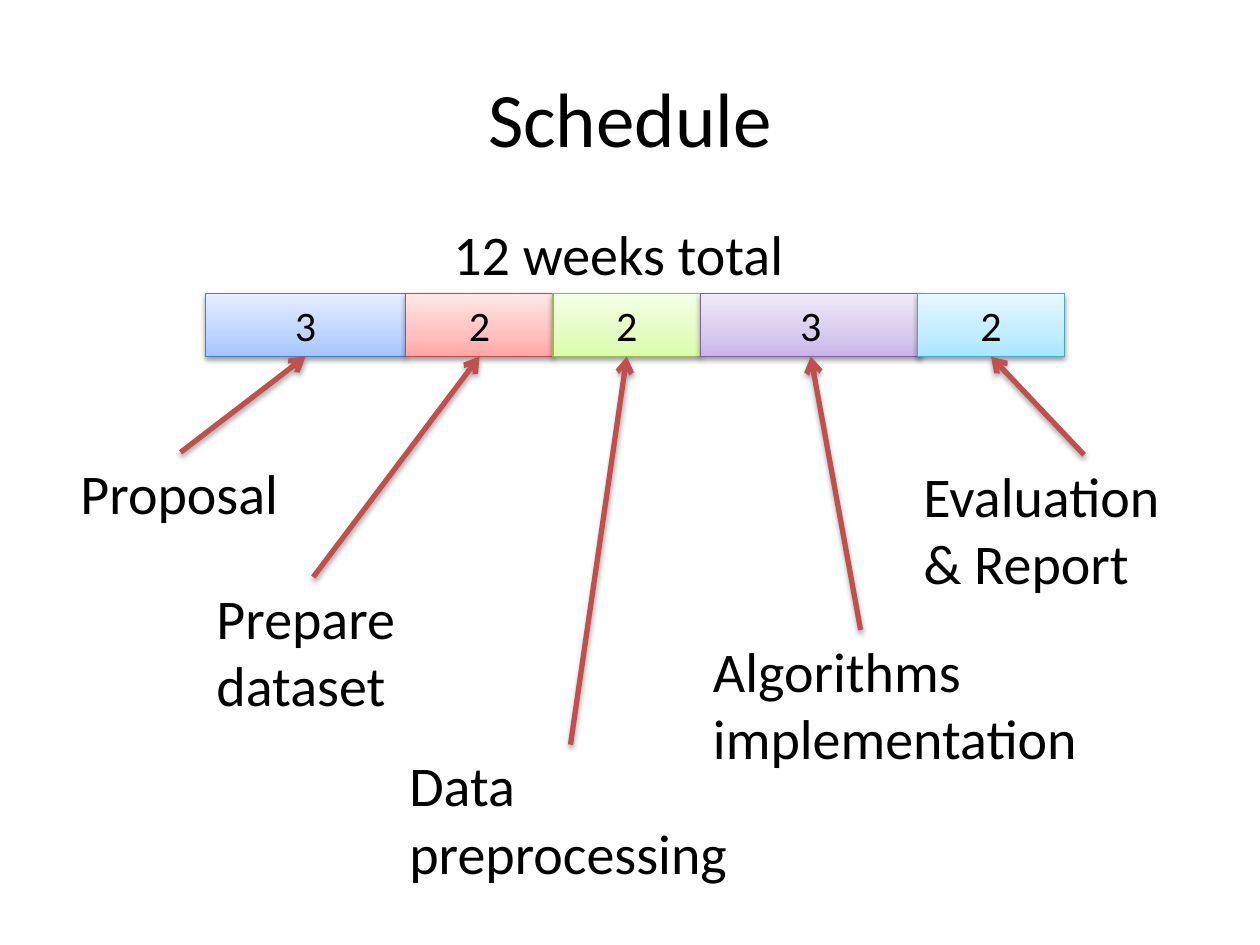
"""Build a schedule slide with a twelve-week bar and labelled stages."""
from dataclasses import dataclass

from lxml.etree import SubElement
from pptx import Presentation
from pptx.dml.color import RGBColor
from pptx.enum.shapes import MSO_CONNECTOR, MSO_SHAPE
from pptx.enum.text import MSO_ANCHOR, MSO_AUTO_SIZE, PP_ALIGN
from pptx.oxml.ns import qn
from pptx.shapes.base import BaseShape
from pptx.shapes.shapetree import SlideShapes
from pptx.text.text import _Paragraph as Para
from pptx.util import Pt

FONT = "Calibri"
BLACK = RGBColor(0x00, 0x00, 0x00)
RED = RGBColor(0xC0, 0x50, 0x4D)
BLUES = (RGBColor(0xA4, 0xC4, 0xFF), RGBColor(0xBF, 0xD4, 0xFF), RGBColor(0xE6, 0xEE, 0xFF))
PINKS = (RGBColor(0xFF, 0xA6, 0xA5), RGBColor(0xFF, 0xC0, 0xBF), RGBColor(0xFF, 0xE7, 0xE7))
GREENS = (RGBColor(0xDA, 0xFD, 0xA7), RGBColor(0xE4, 0xFC, 0xC2), RGBColor(0xF5, 0xFF, 0xE7))
MAUVES = (RGBColor(0xC9, 0xB5, 0xE8), RGBColor(0xD8, 0xCB, 0xEE), RGBColor(0xF0, 0xEA, 0xF9))
AQUAS = (RGBColor(0xA7, 0xE6, 0xFF), RGBColor(0xC1, 0xED, 0xFF), RGBColor(0xE7, 0xF8, 0xFF))
BLUE_EDGE = RGBColor(0x4B, 0x7E, 0xBC)
PINK_EDGE = RGBColor(0xBF, 0x4C, 0x48)
GREEN_EDGE = RGBColor(0x98, 0xB9, 0x55)
MAUVE_EDGE = RGBColor(0x7D, 0x60, 0xA0)
AQUA_EDGE = RGBColor(0x46, 0xAA, 0xC5)
STOPS = (0, 35, 100)
BAR_TOP, BAR_HIGH = 167.76, 36


@dataclass(frozen=True)
class Label:
    text: str
    left: float
    top: float
    width: float
    height: float = 84.96
    wrap: bool = False


@dataclass(frozen=True)
class Stage:
    weeks: int
    left: float
    width: float
    tints: tuple[RGBColor, ...]
    edge: RGBColor
    label: Label
    tail: float


STAGES = (
    Stage(3, 117.36, 114.48, BLUES, BLUE_EDGE,
          Label("Proposal", 38.88, 258.48, 128.88, 46.08), 103.2),
    Stage(2, 231.84, 84.24, PINKS, PINK_EDGE,
          Label("Prepare\ndataset", 116.64, 329.76, 124.56), 179),
    Stage(2, 316.08, 84.24, GREENS, GREEN_EDGE,
          Label("Data\npreprocessing", 226.8, 425.52, 198), 326),
    Stage(3, 400.32, 126, MAUVES, MAUVE_EDGE,
          Label("Algorithms implementation", 400.32, 360, 262.8, wrap=True), 491.8),
    Stage(2, 524.16, 84.24, AQUAS, AQUA_EDGE,
          Label("Evaluation\n& Report", 520.56, 259.92, 198, wrap=True), 619.5),
)
TOTAL = Label("12 weeks total", 252, 121.68, 205.2, 46.08)


def style(para: Para, size: float) -> None:
    para.font.name = FONT
    para.font.size = Pt(size)
    para.font.color.rgb = BLACK


def add_shade(shape: BaseShape, drop: float, alpha: int) -> None:
    effects = SubElement(shape.element.spPr, qn("a:effectLst"))
    shade = SubElement(effects, qn("a:outerShdw"), blurRad=str(Pt(3.15)),
                       dist=str(Pt(drop)), dir="5400000", rotWithShape="0")
    tint = SubElement(shade, qn("a:srgbClr"), val=str(BLACK))
    SubElement(tint, qn("a:alpha"), val=str(alpha * 1000))


def add_bar(shapes: SlideShapes, stage: Stage) -> None:
    bar = shapes.add_shape(MSO_SHAPE.RECTANGLE, Pt(stage.left), Pt(BAR_TOP),
                           Pt(stage.width), Pt(BAR_HIGH))
    bar.fill.gradient()
    bar.fill.gradient_angle = 90
    stops = bar.element.spPr.find(qn("a:gradFill")).find(qn("a:gsLst"))
    for old in list(stops):
        stops.remove(old)
    for place, tint in zip(STOPS, stage.tints):
        stop = SubElement(stops, qn("a:gs"), pos=str(place * 1000))
        SubElement(stop, qn("a:srgbClr"), val=str(tint))
    bar.line.color.rgb = stage.edge
    bar.line.width = Pt(0.75)
    add_shade(bar, 1.6, 38)
    frame = bar.text_frame
    frame.text = str(stage.weeks)
    frame.vertical_anchor = MSO_ANCHOR.MIDDLE
    para = frame.paragraphs[0]
    para.alignment = PP_ALIGN.CENTER
    style(para, 24)


def add_label(shapes: SlideShapes, label: Label) -> None:
    box = shapes.add_textbox(Pt(label.left), Pt(label.top),
                             Pt(label.width), Pt(label.height))
    frame = box.text_frame
    frame.word_wrap = label.wrap
    frame.auto_size = MSO_AUTO_SIZE.SHAPE_TO_FIT_TEXT
    frame.text = label.text
    for para in frame.paragraphs:
        style(para, 32)


def add_arrow(shapes: SlideShapes, stage: Stage) -> None:
    arrow = shapes.add_connector(
        MSO_CONNECTOR.STRAIGHT, Pt(stage.tail), Pt(stage.label.top),
        Pt(stage.left + stage.width / 2), Pt(BAR_TOP + BAR_HIGH))
    arrow.line.color.rgb = RED
    arrow.line.width = Pt(3)
    SubElement(arrow.element.spPr.find(qn("a:ln")), qn("a:tailEnd"), type="arrow")
    add_shade(arrow, 1.8, 35)


def main() -> None:
    deck = Presentation()
    deck.slide_width, deck.slide_height = Pt(720), Pt(540)
    slide = deck.slides.add_slide(deck.slide_layouts[5])
    shapes = slide.shapes
    title = shapes.title
    title.left, title.top, title.width, title.height = Pt(36), Pt(21.6), Pt(648), Pt(90)
    title.text_frame.text = "Schedule"
    title.text_frame.vertical_anchor = MSO_ANCHOR.MIDDLE
    head = title.text_frame.paragraphs[0]
    head.alignment = PP_ALIGN.CENTER
    style(head, 44)
    for stage in STAGES:
        add_bar(shapes, stage)
    for stage in STAGES:
        add_label(shapes, stage.label)
        add_arrow(shapes, stage)
    add_label(shapes, TOTAL)
    deck.save("out.pptx")


if __name__ == "__main__":
    main()
